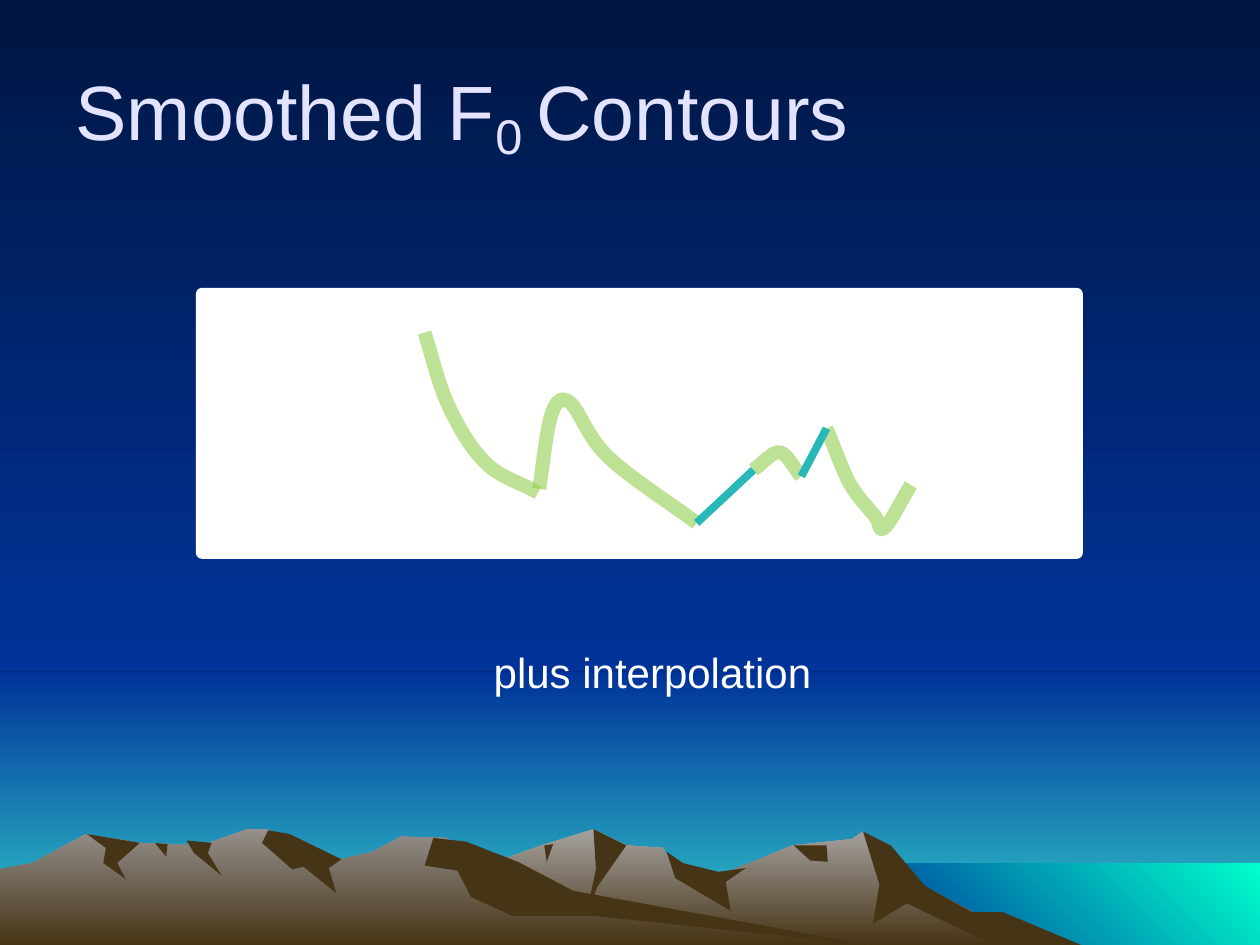
import pptx
import pptx.util
import pptx.dml.color
import pptx.enum.shapes
import pptx.enum.text
import pptx.oxml.ns
import lxml.etree

PX = 9144  # EMU in one px, 100 px to the inch
SLIDE_W, SLIDE_H = 1000, 750
HORIZON = 533
SHORE_X, SHORE_Y = 683, 685
FONT = "Arial"
COLORS = {
    "night": "001642", "sky": "003399", "haze": "33CCCC", "sea": "00FFCC",
    "rock_right": "A5A29F", "rock_left": "938F8B", "shade": "463416",
    "white": "FFFFFF", "title": "E3E3FF", "contour": "92D050", "bridge": "29B8B8",
}

# Each range: colour of its ridge, outline of the rock, outlines of its shaded faces
RANGES = [
    ("rock_right",
     [(258, SLIDE_H), (355, 698), (430, 671), (471, 658), (497, 671), (526, 673), (536, 690),
      (566, 697), (629, 671), (676, 666), (685, 660), (702, 671), (723, 698), (821, SLIDE_H)],
     [[(685, 660), (707, 671), (734, 703), (771, 724), (796, 724), (858, SLIDE_H),
       (788, SLIDE_H), (720, 717), (693, 733), (698, 702)],
      [(471, 658), (497, 671), (474, 704), (465, 727), (473, 690)],
      [(529, 676), (542, 685), (570, 692), (592, 689), (576, 700), (580, 723), (536, 697)],
      [(630, 671), (656, 671), (657, 684), (643, 683)],
      [(432, 671), (439, 670), (434, 684)]]),
    ("rock_left",
     [(0, SLIDE_H), (0, 690), (26, 685), (68, 662), (111, 669), (160, 671), (196, 658),
      (212, 658), (271, 682), (296, 676), (318, 664), (354, 665), (432, 712), (690, SLIDE_H)],
     [[(213, 659), (230, 662), (271, 682), (261, 689), (267, 709), (241, 688), (232, 690),
       (208, 669)],
      [(337, 687), (344, 665), (370, 668), (411, 684), (455, 707), (690, SLIDE_H),
       (472, 727), (407, 727), (374, 712), (363, 691)],
      [(148, 667), (168, 669), (165, 677), (176, 695), (154, 677)],
      [(123, 669), (133, 670), (132, 680)],
      [(69, 662), (111, 669), (93, 685), (100, 698), (82, 685), (84, 673)]]),
]

# Knots of the pitch contours within the panel
CONTOURS = [
    [(181, 35), (200, 93), (229, 138), (271, 162)],
    [(272, 159), (282, 99), (297, 91), (327, 134), (397, 186)],
    [(442, 144), (463, 130), (480, 149)],
    [(500, 111), (517, 152), (538, 180), (546, 190), (567, 156)],
]


def rgb(name):
    return pptx.dml.color.RGBColor.from_string(COLORS[name])


def emu(*lengths):
    return [pptx.util.Emu(length * PX) for length in lengths]


def set_all(target, values):
    for key, value in values.items():
        setattr(target, key, value)


def paint(fill, start, end=None, angle=270):
    if end is None:
        fill.solid()
        fill.fore_color.rgb = rgb(start)
        return
    fill.gradient()
    fill.gradient_angle = angle
    for position, (stop, name) in enumerate(zip(fill.gradient_stops, (start, end))):
        stop.position = position
        stop.color.rgb = rgb(name)


def add_block(slide, box, kind="RECTANGLE"):
    block = slide.shapes.add_shape(getattr(pptx.enum.shapes.MSO_SHAPE, kind), *emu(*box))
    block.shadow.inherit = False
    block.line.fill.background()
    return block


def add_outline(slide, box, points, close):
    builder = slide.shapes.build_freeform(*points[0], scale=PX)
    builder.add_line_segments(points[1:], close=close)
    outline = builder.convert_to_shape(*emu(*box[:2]))
    outline.shadow.inherit = False
    return outline


def add_mountain(slide, box, points, *colors):
    mountain = add_outline(slide, box, points, True)
    mountain.line.fill.background()
    paint(mountain.fill, *colors)


def add_scenery(slide, box):
    left, top, width, height = box
    # Sky, haze and sea
    bands = [
        ((left, top, width, HORIZON), "night", "sky", 270),
        ((left, top + HORIZON, width, height - HORIZON), "sky", "haze", 270),
        ((left + SHORE_X, top + SHORE_Y, width - SHORE_X, height - SHORE_Y), "sky", "sea", 45),
    ]
    for band, *colors in bands:
        paint(add_block(slide, band).fill, *colors)
    # Mountains
    for ridge, rock, faces in RANGES:
        add_mountain(slide, box, rock, ridge, "shade")
        for face in faces:
            add_mountain(slide, box, face, "shade")


def add_title(slide, box):
    title = slide.shapes.title
    set_all(title, dict(zip(("left", "top", "width", "height"), emu(*box))))
    set_all(title.text_frame, {"vertical_anchor": pptx.enum.text.MSO_ANCHOR.MIDDLE,
                               "auto_size": pptx.enum.text.MSO_AUTO_SIZE.NONE})
    paragraph = title.text_frame.paragraphs[0]
    paragraph.alignment = pptx.enum.text.PP_ALIGN.LEFT
    for text, size, baseline in (("Smoothed F", 44, 0), ("0 ", 48, -16000), ("Contours", 44, 0)):
        run = paragraph.add_run()
        run.text = text
        set_all(run.font, {"name": FONT, "size": pptx.util.Pt(size)})
        run.font.color.rgb = rgb("title")
        run.font._element.set("baseline", str(baseline))
    slide.shapes._spTree.append(title._element)  # in front of the scenery


def smooth_points(knots):
    """Put two Bezier handles between knots, along the chord of their neighbours."""
    def beyond(end, inner):
        return tuple(2 * e - i for e, i in zip(end, inner))

    chain = [beyond(knots[0], knots[1]), *knots, beyond(knots[-1], knots[-2])]
    points = [knots[0]]
    for before, start, end, after in zip(chain, chain[1:], chain[2:], chain[3:]):
        points.append(tuple(round(s + (e - b) / 6) for b, s, e in zip(before, start, end)))
        points.append(tuple(round(e - (a - s) / 6) for s, e, a in zip(start, end, after)))
        points.append(end)
    return points


def curve_segments(outline):
    """Turn every three line segments into one cubic Bezier segment."""
    qn = pptx.oxml.ns.qn
    lines = list(outline._element.iter(qn("a:lnTo")))
    for first in range(0, len(lines), 3):
        curve = lxml.etree.Element(qn("a:cubicBezTo"))
        lines[first].addprevious(curve)
        for line in lines[first:first + 3]:
            curve.append(line[0])
            line.getparent().remove(line)


def add_contour_panel(slide, box):
    left, top = box[:2]
    qn = pptx.oxml.ns.qn
    panel = add_block(slide, box, "ROUNDED_RECTANGLE")
    panel.adjustments[0] = 0.02
    paint(panel.fill, "white")
    paint(panel.line.fill, "white")
    panel.line.width = pptx.util.Pt(0.75)
    # Smoothed contours
    for knots in CONTOURS:
        contour = add_outline(slide, box, smooth_points(knots), False)
        curve_segments(contour)
        contour.fill.background()
        paint(contour.line.fill, "contour")
        contour.line.width = pptx.util.Pt(8)
        color = contour.line._ln.find(".//" + qn("a:srgbClr"))
        lxml.etree.SubElement(color, qn("a:alpha"), val="60000")
    # Interpolation across the last two gaps
    for before, after in zip(CONTOURS[1:], CONTOURS[2:]):
        (x1, y1), (x2, y2) = before[-1], after[0]
        bridge = slide.shapes.add_connector(
            pptx.enum.shapes.MSO_CONNECTOR.STRAIGHT,
            *emu(left + x1, top + y1, left + x2, top + y2))
        paint(bridge.line.fill, "bridge")
        bridge.line.width = pptx.util.Pt(4.5)
        lxml.etree.SubElement(bridge._element.spPr, qn("a:effectLst"))


def add_caption(slide, box):
    frame = slide.shapes.add_textbox(*emu(*box)).text_frame
    frame.word_wrap = True
    run = frame.paragraphs[0].add_run()
    run.text = "plus interpolation"
    set_all(run.font, {"name": FONT, "size": pptx.util.Pt(24)})
    run.font.color.rgb = rgb("white")


def main():
    deck = pptx.Presentation()
    set_all(deck, dict(zip(("slide_width", "slide_height"), emu(SLIDE_W, SLIDE_H))))
    slide = deck.slides.add_slide(deck.slide_layouts[5])
    paint(slide.background.fill, "night", "sky")
    add_scenery(slide, (0, 0, SLIDE_W, SLIDE_H))
    add_title(slide, (50, 25, 900, 125))
    add_contour_panel(slide, (156, 229, 703, 214))
    add_caption(slide, (382, 508, 277, 50))
    deck.save("out.pptx")


if __name__ == "__main__":
    main()
